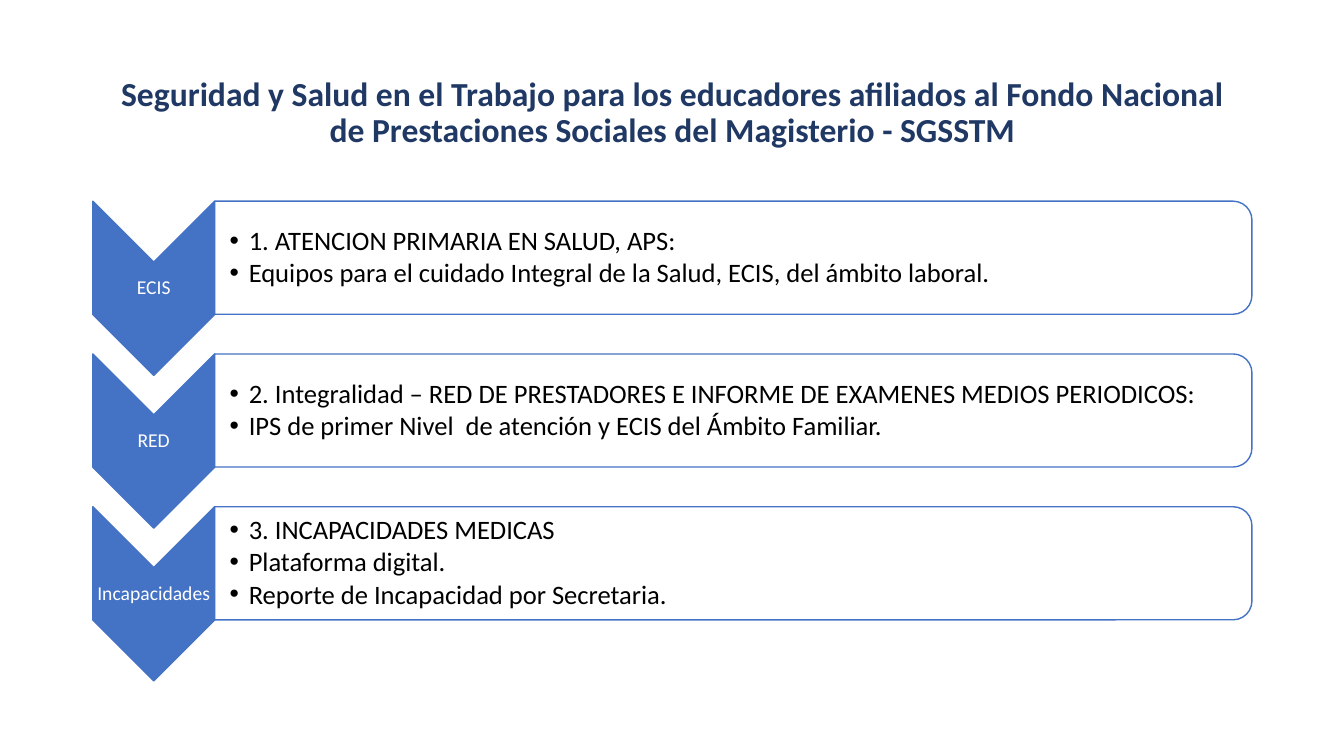
from lxml import etree
from pptx import Presentation
from pptx.dml.color import RGBColor
from pptx.enum.shapes import MSO_SHAPE as Preset
from pptx.enum.text import MSO_ANCHOR as Anchor, PP_ALIGN as Align
from pptx.oxml.ns import qn
from pptx.util import Cm, Pt

TITLE = ("Seguridad y Salud en el Trabajo para los educadores afiliados al Fondo "
         "Nacional de Prestaciones Sociales del Magisterio - SGSSTM")
STAGES = [
    ("ECIS", ["1. ATENCION PRIMARIA EN SALUD, APS:",
              "Equipos para el cuidado Integral de la Salud, ECIS, del ámbito laboral."]),
    ("RED", ["2. Integralidad – RED DE PRESTADORES E INFORME DE EXAMENES MEDIOS PERIODICOS:",
             "IPS de primer Nivel  de atención y ECIS del Ámbito Familiar."]),
    ("Incapacidades", ["3. INCAPACIDADES MEDICAS",
                       "Plataforma digital.",
                       "Reporte de Incapacidad por Secretaria."]),
]
BLUE, NAVY, WHITE, BLACK = "4472C4", "203864", "FFFFFF", "000000"
TITLE_FORMAT = {"size": Pt(24), "bold": True}
LABEL_FORMAT = {"size": Pt(14)}
BULLET_FORMAT = {"size": Pt(19)}
FIRST_TOP, STEP = 5.07, 3.85
CHEVRON_LEFT, CHEVRON_WIDTH, CHEVRON_HEIGHT = 2.34, 3.07, 4.39
PANEL_WIDTH, PANEL_HEIGHT = 26.14, 2.85
PANEL_LEFT = CHEVRON_LEFT + CHEVRON_WIDTH
LABEL_HEIGHT, BULLETS_WIDTH, BULLETS_HEIGHT = 1.32, 26.01, 2.56
INDENT = 0.48


def colour(target, value):
    """Set a solid colour from a hex string on a fill or a font."""
    if hasattr(target, "solid"):
        target.solid()
        target.fore_color.rgb = RGBColor.from_string(value)
    else:
        target.color.rgb = RGBColor.from_string(value)


def add_turned(page, preset, left, top, width, height, fill):
    """Add a preset turned a quarter clockwise, filling the given visible area."""
    shift = (width - height) / 2
    shape = page.shapes.add_shape(
        preset, Cm(left + shift), Cm(top - shift), Cm(height), Cm(width))
    shape.rotation = 90
    shape.shadow.inherit = False
    colour(shape.fill, fill)
    colour(shape.line.fill, BLUE)
    shape.line.width = Pt(1)
    return shape


def add_text(page, area, lines, values, ink, align, after=0, insets=None, bullets=False):
    """Add a middle-anchored text box with one paragraph per line."""
    frame = page.shapes.add_textbox(*map(Cm, area)).text_frame
    frame.word_wrap = True
    frame.vertical_anchor = Anchor.MIDDLE
    for side, inset in (insets or {}).items():
        setattr(frame, f"margin_{side}", Cm(inset))
    for index, line in enumerate(lines):
        para = frame.add_paragraph() if index else frame.paragraphs[0]
        layout = {"alignment": align, "line_spacing": 0.9, "space_after": Pt(after)}
        for name, value in layout.items():
            setattr(para, name, value)
        span = para.add_run()
        span.text = line
        for name, value in {"name": "Calibri", **values}.items():
            setattr(span.font, name, value)
        colour(span.font, ink)
        if bullets:
            properties = para._p.get_or_add_pPr()
            properties.set("marL", str(Cm(INDENT)))
            properties.set("indent", str(-Cm(INDENT)))
            etree.SubElement(properties, qn("a:buFont")).set("typeface", "Arial")
            etree.SubElement(properties, qn("a:buChar")).set("char", "•")


def add_stage(page, top, label, lines):
    """Add one chevron with its label and the panel of bullets beside it."""
    slim = dict.fromkeys(("left", "top", "right", "bottom"), 0.02)
    add_turned(page, Preset.CHEVRON, CHEVRON_LEFT, top,
               CHEVRON_WIDTH, CHEVRON_HEIGHT, BLUE)
    label_top = top + (CHEVRON_HEIGHT - LABEL_HEIGHT) / 2
    add_text(page, (CHEVRON_LEFT, label_top, CHEVRON_WIDTH, LABEL_HEIGHT), [label],
             LABEL_FORMAT, WHITE, Align.CENTER, 4.9, slim)
    panel = add_turned(page, Preset.ROUND_2_SAME_RECTANGLE, PANEL_LEFT, top,
                       PANEL_WIDTH, PANEL_HEIGHT, WHITE)
    tint = panel._element.spPr.find(qn("a:solidFill")).find(qn("a:srgbClr"))
    etree.SubElement(tint, qn("a:alpha")).set("val", "90000")
    bullets_top = top + (PANEL_HEIGHT - BULLETS_HEIGHT) / 2
    add_text(page, (PANEL_LEFT, bullets_top, BULLETS_WIDTH, BULLETS_HEIGHT), lines,
             BULLET_FORMAT, BLACK, Align.LEFT, 2.4, {**slim, "left": 0.38}, True)


def main():
    """Build the slide and save it."""
    deck = Presentation()
    deck.slide_width, deck.slide_height = Cm(33.87), Cm(19.05)
    page = deck.slides.add_slide(deck.slide_layouts[6])
    for index, (label, lines) in enumerate(STAGES):
        add_stage(page, FIRST_TOP + index * STEP, label, lines)
    add_text(page, (2.34, 1.02, 29.21, 3.68), [TITLE], TITLE_FORMAT, NAVY, Align.CENTER)
    deck.save("out.pptx")


if __name__ == "__main__":
    main()
